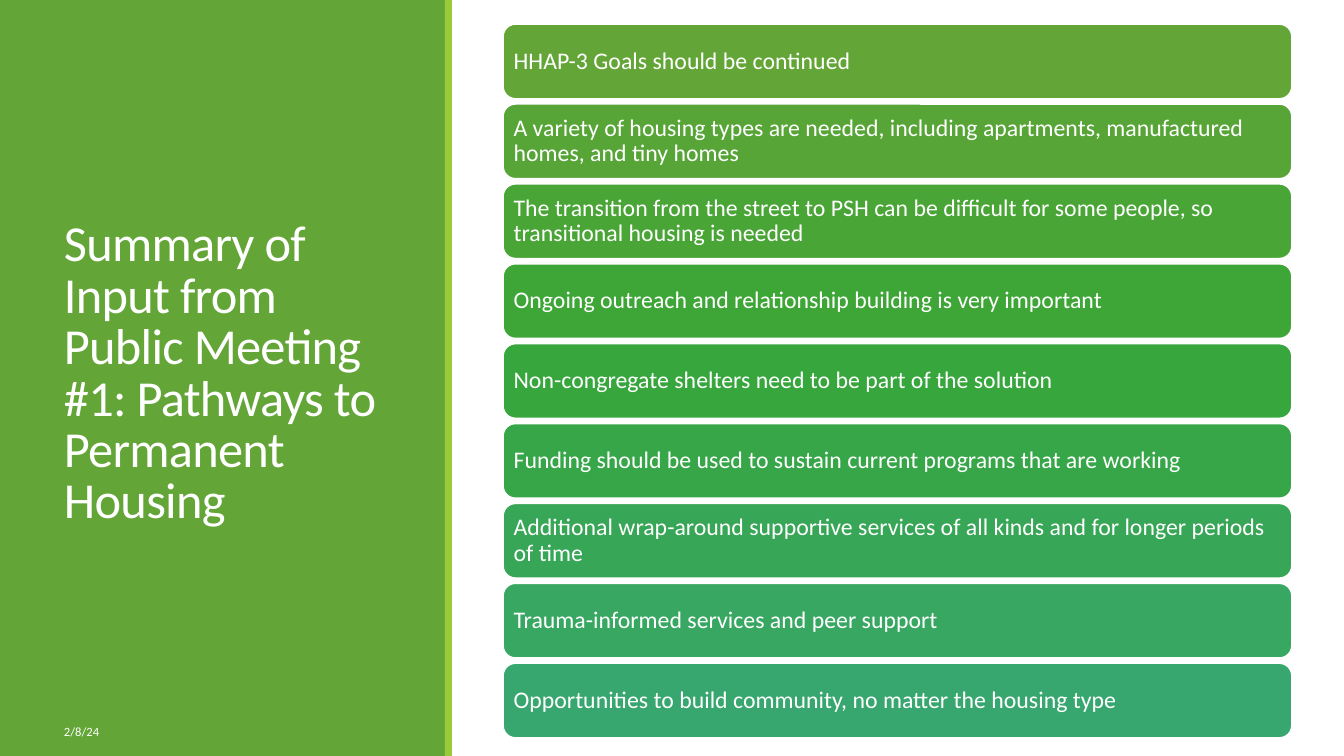
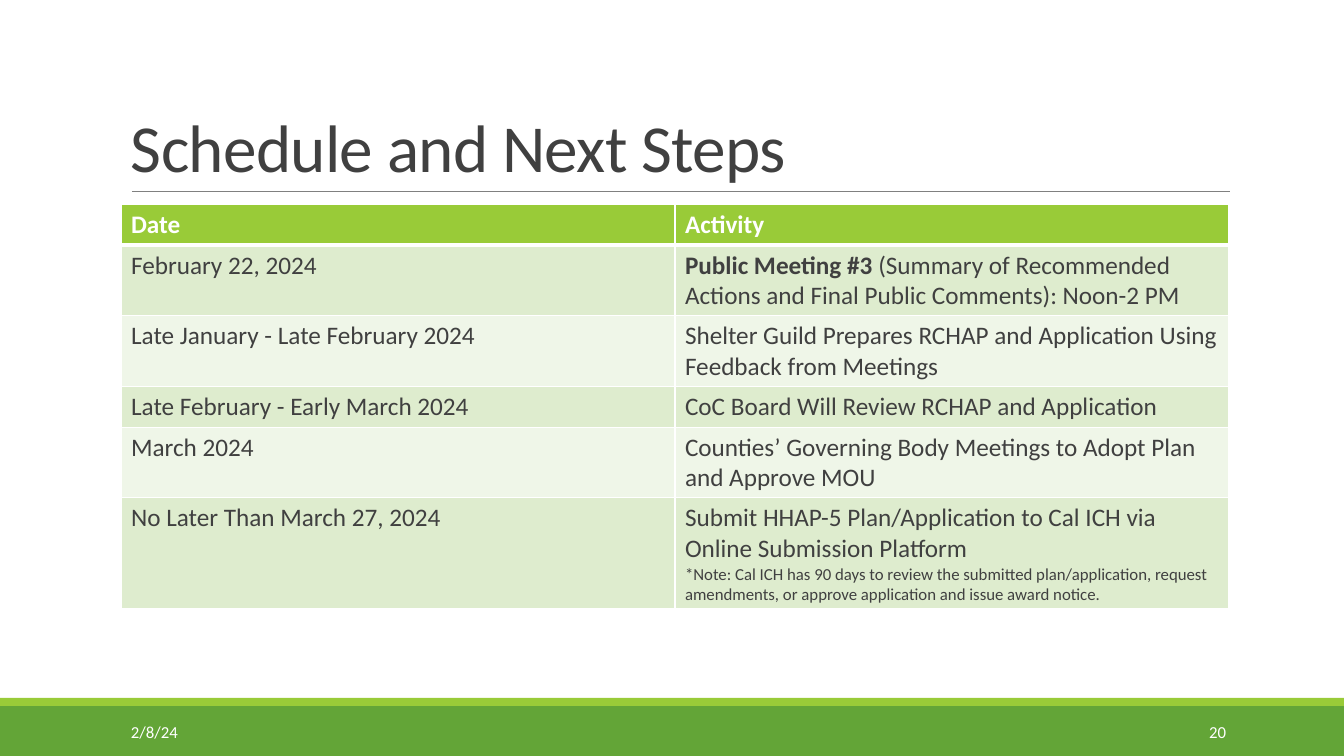
import colorsys

import pptx
import pptx.dml.color
import pptx.enum.shapes
import pptx.enum.text
import pptx.oxml.ns
import pptx.util
from lxml import etree

EMU_PER_PX = 914400 / 100.8
SLIDE_W, SLIDE_H = 1344, 756
FONT = "Calibri"
GREEN, LIME, TEAL = "63A537", "99CB38", "37A76F"
WHITE, INK, RULE = "FFFFFF", "404040", "808080"
ROW_FILLS = ("DEECCE", "EFF6E8")

SHAPE = pptx.enum.shapes.MSO_SHAPE
ALIGN = pptx.enum.text.PP_ALIGN
ANCHOR = pptx.enum.text.MSO_ANCHOR
qn = pptx.oxml.ns.qn

POINTS = [
    "HHAP-3 Goals should be continued",
    "A variety of housing types are needed, including apartments, manufactured homes, and tiny homes",
    "The transition from the street to PSH can be difficult for some people, so transitional housing is needed",
    "Ongoing outreach and relationship building is very important",
    "Non-congregate shelters need to be part of the solution",
    "Funding should be used to sustain current programs that are working",
    "Additional wrap-around supportive services of all kinds and for longer periods of time",
    "Trauma-informed services and peer support",
    "Opportunities to build community, no matter the housing type",
]

# Each cell is a list of paragraphs, each a list of (text, font overrides)
SCHEDULE = [
    ("February 22, 2024",
     [[("Public Meeting #3 ", {"bold": True}),
       ("(Summary of Recommended Actions and Final Public Comments): Noon-2 PM", {})]]),
    ("Late January - Late February 2024",
     [[("Shelter Guild Prepares RCHAP and Application Using Feedback from Meetings", {})]]),
    ("Late February - Early March 2024",
     [[("CoC Board Will Review RCHAP and Application", {})]]),
    ("March 2024",
     [[("Counties’ Governing Body Meetings to Adopt Plan and Approve MOU", {})]]),
    ("No Later Than March 27, 2024",
     [[("Submit HHAP-5 Plan/Application to Cal ICH via Online Submission Platform", {})],
      [("*Note: Cal ICH has 90 days to review the submitted plan/application, request "
        "amendments, or approve application and issue award notice.", {"size": 12})]]),
]


def px(n):
    return pptx.util.Emu(round(n * EMU_PER_PX))


def place(box):
    return [px(n) for n in box]


def rgb(color):
    return pptx.dml.color.RGBColor.from_string(color)


def add_run(p, text, size, color, bold=False):
    r = p.add_run()
    r.text = text
    for name, value in {"name": FONT, "size": pptx.util.Pt(size), "bold": bold}.items():
        setattr(r.font, name, value)
    r.font.color.rgb = rgb(color)
    return r


def add_block(s, kind, box, fill):
    sp = s.shapes.add_shape(kind, *place(box))
    sp.shadow.inherit = False
    sp.fill.solid()
    sp.fill.fore_color.rgb = rgb(fill)
    sp.line.fill.background()
    return sp


def add_text(s, box, text, size, color, anchor=ANCHOR.MIDDLE, align=ALIGN.LEFT):
    tf = s.shapes.add_textbox(*place(box)).text_frame
    tf.word_wrap = True
    tf.vertical_anchor = anchor
    p = tf.paragraphs[0]
    p.alignment = align
    return p, add_run(p, text, size, color)


def add_title(s, box, text, size, color, anchor):
    p, r = add_text(s, box, text, size, color, anchor)
    p.line_spacing = 0.85
    r.font._element.set("spc", "-50")


def add_bands(s, panel, accent):
    for box, fill in ((panel, GREEN), (accent, LIME)):
        add_block(s, SHAPE.RECTANGLE, box, fill)


def add_date(s, left, size):
    add_text(s, (left, 712, 192, 40), "2/8/24", size, WHITE)


def blend(start, end, t):
    """Step from one colour to another through the hues between them."""
    a, b = (colorsys.rgb_to_hls(*(v / 255 for v in rgb(c))) for c in (start, end))
    mixed = colorsys.hls_to_rgb(*(m + (n - m) * t for m, n in zip(a, b)))
    return "".join(f"{round(v * 255):02X}" for v in mixed)


def add_bar_list(s, box, texts, gap):
    left, top, width, height = box
    pitch = (height + gap) / len(texts)
    for i, text in enumerate(texts):
        sp = add_block(s, SHAPE.ROUNDED_RECTANGLE, (left, top + i * pitch, width, pitch - gap),
                       blend(GREEN, TEAL, i / (len(texts) - 1)))
        sp.line.color.rgb = rgb(WHITE)
        sp.line.width = pptx.util.Pt(1.25)
        tf = sp.text_frame
        tf.word_wrap = True
        tf.vertical_anchor = ANCHOR.MIDDLE
        for side in ("left", "top", "right", "bottom"):
            setattr(tf, f"margin_{side}", px(7))
        p = tf.paragraphs[0]
        p.alignment = ALIGN.LEFT
        p.line_spacing = 0.9
        add_run(p, text, 17, WHITE)


def add_rule(s, x1, x2, y):
    line = s.shapes.add_connector(pptx.enum.shapes.MSO_CONNECTOR.STRAIGHT,
                                  px(x1), px(y), px(x2), px(y))
    line.line.color.rgb = rgb(RULE)
    line.line.width = pptx.util.Pt(0.5)
    etree.SubElement(line._element.spPr, qn("a:effectLst"))


def set_borders(cell, **widths):
    tcPr = cell._tc.get_or_add_tcPr()
    for side in "LRTB":
        ln = etree.SubElement(tcPr, qn(f"a:ln{side}"),
                              w=str(pptx.util.Pt(widths.get(side, 1))))
        fill = etree.SubElement(ln, qn("a:solidFill"))
        etree.SubElement(fill, qn("a:srgbClr"), val=WHITE)


def fill_cell(cell, paragraphs, fill, **font):
    cell.fill.solid()
    cell.fill.fore_color.rgb = rgb(fill)
    tf = cell.text_frame
    for i, runs in enumerate(paragraphs):
        p = tf.add_paragraph() if i else tf.paragraphs[0]
        for text, changes in runs:
            add_run(p, text, **{"size": 18, **font, **changes})


def add_schedule(s, left, top, width, row_height):
    rows = [("Date", [[("Activity", {})]])] + SCHEDULE
    box = (left, top, width, row_height * len(rows))
    table = s.shapes.add_table(len(rows), 2, *place(box)).table
    for i, (date, activity) in enumerate(rows):
        header = i == 0
        fill = LIME if header else ROW_FILLS[(i - 1) % 2]
        font = {"color": WHITE if header else INK, "bold": header}
        for cell, paragraphs in zip(table.rows[i].cells, ([[(date, {})]], activity)):
            set_borders(cell, B=3 if header else 1, T=3 if i == 1 else 1)
            fill_cell(cell, paragraphs, fill, **font)


def build_summary(prs):
    s = prs.slides.add_slide(prs.slide_layouts[6])
    # Side panel with title and date
    add_bands(s, (0, 0, 446, SLIDE_H), (445, 0, 7, SLIDE_H))
    add_title(s, (54, 57, 340, 636),
              "Summary of Input from Public Meeting #1: Pathways to Permanent Housing",
              36, WHITE, ANCHOR.MIDDLE)
    add_date(s, 54, 9)
    # Stack of bars
    add_bar_list(s, (503, 24, 789, 714), POINTS, 5)


def build_schedule(prs):
    s = prs.slides.add_slide(prs.slide_layouts[6])
    # Bottom bands and footer
    add_bands(s, (0, 706, SLIDE_W, 50), (0, 698, SLIDE_W, 8))
    add_date(s, 121, 12)
    add_text(s, (1092, 712, 144, 40), "20", 12, WHITE, align=ALIGN.RIGHT)
    # Title and rule
    add_title(s, (121, 31, 1109, 160), "Schedule and Next Steps", 48, INK, ANCHOR.BOTTOM)
    add_rule(s, 132, 1230, 191)
    # Dates and activities
    add_schedule(s, 121, 204, 1108, 41)


def main():
    prs = pptx.Presentation()
    prs.slide_width, prs.slide_height = px(SLIDE_W), px(SLIDE_H)
    build_summary(prs)
    build_schedule(prs)
    prs.save("out.pptx")


if __name__ == "__main__":
    main()
